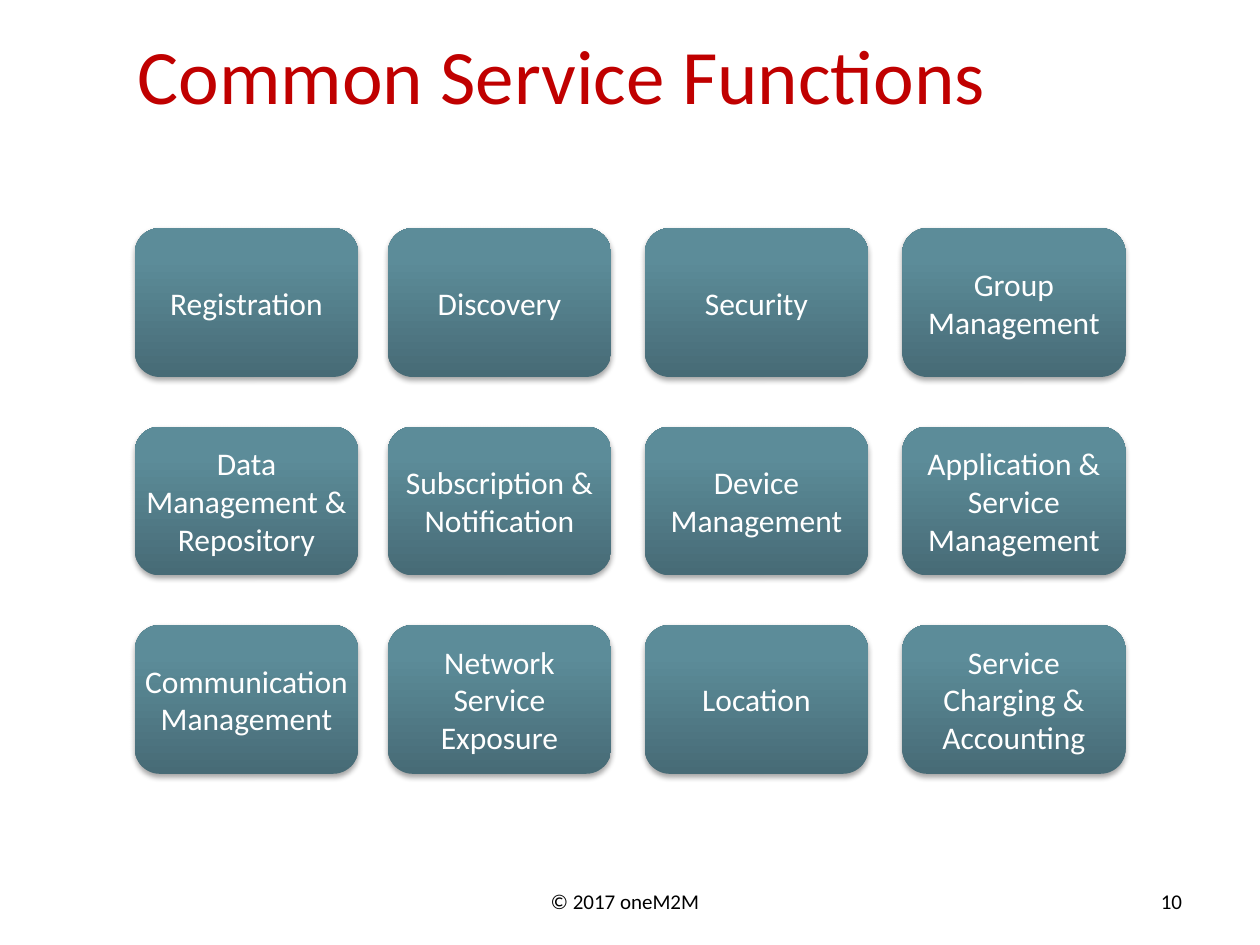
from pptx import Presentation
from pptx.dml.color import RGBColor
from pptx.enum.shapes import MSO_SHAPE
from pptx.enum.text import MSO_ANCHOR, PP_ALIGN
from pptx.oxml.ns import qn
from pptx.util import Cm, Pt
from lxml import etree

ROUND = MSO_SHAPE.ROUNDED_RECTANGLE
TOP, MIDDLE = MSO_ANCHOR.TOP, MSO_ANCHOR.MIDDLE
LEFT, CENTER, RIGHT = PP_ALIGN.LEFT, PP_ALIGN.CENTER, PP_ALIGN.RIGHT

STOPS = [(0, "476B76"), (80, "5C8C99"), (100, "5B8D9B")]
COLS = [2.72, 7.82, 13, 18.19]
ROW_TOP, ROW_STEP = 4.6, 4
TILE_W, TILE_H = 4.5, 3
TILES = [
    ["Registration", "Discovery", "Security", "Group Management"],
    ["Data Management & Repository", "Subscription & Notification",
     "Device Management", "Application & Service Management"],
    ["Communication Management", "Network Service Exposure",
     "Location", "Service Charging & Accounting"],
]


def color(code):
    return RGBColor.from_string(code)


def add(parent, tag, **attrs):
    """Append a DrawingML child element with the given attributes."""
    return etree.SubElement(parent, qn("a:" + tag),
                            {key: str(val) for key, val in attrs.items()})


class Deck:
    """Holds the style and the current slide."""

    font = "Calibri"

    def __init__(self):
        self.prs = Presentation()
        self.prs.slide_width, self.prs.slide_height = Cm(25.4), Cm(19.05)
        self.slide = self.prs.slides.add_slide(self.prs.slide_layouts[6])

    def label(self, frame, text, size, code, align):
        para = frame.paragraphs[0]
        para.alignment = align
        run = para.add_run()
        run.text = text
        run.font.name, run.font.size = self.font, Pt(size)
        run.font.color.rgb = color(code)
        return para

    def title(self, text, x, y, w, h):
        box = self.slide.shapes.add_textbox(Cm(x), Cm(y), Cm(w), Cm(h))
        frame = box.text_frame
        frame.word_wrap, frame.vertical_anchor = True, TOP
        frame.margin_top = 0
        para = self.label(frame, text, 44, "C00000", CENTER)
        para.line_spacing = 0.9

    def note(self, text, x, y, w, h, align):
        box = self.slide.shapes.add_textbox(Cm(x), Cm(y), Cm(w), Cm(h))
        box.text_frame.word_wrap = False
        self.label(box.text_frame, text, 12, "000000", align)

    def tile(self, text, x, y):
        shape = self.slide.shapes.add_shape(
            ROUND, Cm(x), Cm(y), Cm(TILE_W), Cm(TILE_H))
        self.shade(shape)
        shape.line.fill.background()
        self.shadow(shape)
        frame = shape.text_frame
        frame.word_wrap, frame.vertical_anchor = True, MIDDLE
        frame.margin_left = frame.margin_right = 0
        self.label(frame, text, 18, "FFFFFF", CENTER)

    def shade(self, shape):
        """Fill with the three-stop gradient, running from bottom to top."""
        shape.fill.gradient()
        shape.fill.gradient_angle = 90
        stops = shape.element.spPr.find(".//" + qn("a:gsLst"))
        for old in list(stops):
            stops.remove(old)
        for pos, code in STOPS:
            add(add(stops, "gs", pos=pos * 1000), "srgbClr", val=code)

    def shadow(self, shape):
        shape.shadow.inherit = False
        effects = shape.element.spPr.find(qn("a:effectLst"))
        drop = add(effects, "outerShdw", blurRad=Pt(3.1), dist=Pt(1.8),
                   dir=5400000, rotWithShape=0)
        add(add(drop, "srgbClr", val="000000"), "alpha", val=35000)


def main():
    deck = Deck()
    deck.note("© 2017 oneM2M", 10.85, 17.78, 3.56, 0.76, LEFT)
    deck.note("10", 23.06, 17.78, 1.02, 0.76, RIGHT)
    for row, names in enumerate(TILES):
        for x, name in zip(COLS, names):
            deck.tile(name, x, ROW_TOP + row * ROW_STEP)
    deck.title("Common Service Functions", 1.27, 0.76, 20.12, 3.18)
    deck.prs.save("out.pptx")


if __name__ == "__main__":
    main()
